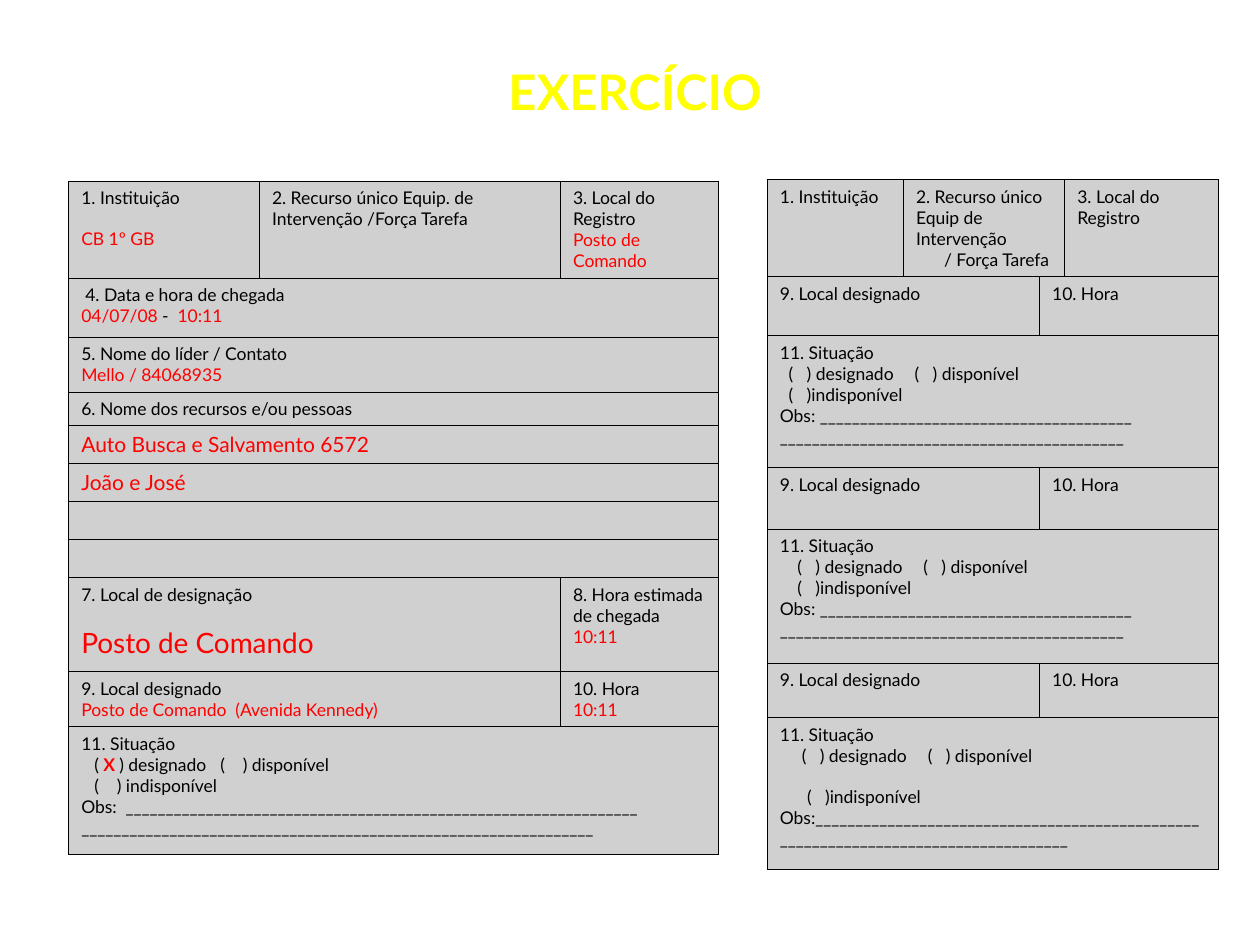
from dataclasses import dataclass

from lxml import etree
from pptx import Presentation
from pptx import util as u
from pptx.dml.color import RGBColor
from pptx.enum import text
from pptx.oxml.ns import qn

COLORS = {"title": "FFFF00", "label": "000000", "answer": "FF0000", "cell": "D0D0D0", "border": "000000"}


@dataclass
class Line:
    runs: list
    size: float = 10
    indent: float = 0
    gap: float = 0
    tab: float = 0


def label(wording, **layout):
    return Line([(wording, "label", False)], **layout)


def answer(wording, **layout):
    return Line([(wording, "answer", False)], **layout)


def situation(indent, tab, last_indent, last_gap, notes):
    options = [
        label("(   ) designado\t(   ) disponível", indent=indent, tab=tab),
        label("(   )indisponível", indent=last_indent, gap=last_gap),
    ]
    return [label("11. Situação"), *options, *[label(note) for note in notes]]


class FormSlide:
    font = "Lato"
    border_width = 0.75

    def __init__(self, presentation):
        self.slide = presentation.slides.add_slide(presentation.slide_layouts[5])

    def style_run(self, run, size, color, bold):
        run.font.name = self.font
        run.font.size = u.Pt(size)
        run.font.bold = bold
        run.font.color.rgb = RGBColor.from_string(COLORS[color])

    def title(self, wording, left, top, width, height):
        shape = self.slide.shapes.title
        shape.left, shape.top, shape.width, shape.height = map(u.Pt, (left, top, width, height))
        frame = shape.text_frame
        frame.text = wording
        frame.vertical_anchor = text.MSO_ANCHOR.MIDDLE
        paragraph = frame.paragraphs[0]
        paragraph.alignment = text.PP_ALIGN.CENTER
        self.style_run(paragraph.runs[0], 28, "title", True)

    def write_line(self, paragraph, line):
        properties = paragraph._p.get_or_add_pPr()
        properties.set("marL", str(u.Pt(line.indent)))
        properties.set("indent", "0")
        if line.gap:
            paragraph.space_before = u.Pt(line.gap)
        if line.tab:
            stops = etree.SubElement(properties, qn("a:tabLst"))
            etree.SubElement(stops, qn("a:tab"), pos=str(u.Pt(line.tab)), algn="l")
        for wording, color, bold in line.runs:
            run = paragraph.add_run()
            run.text = wording
            self.style_run(run, line.size, color, bold)

    def style_cell(self, cell):
        cell.fill.solid()
        cell.fill.fore_color.rgb = RGBColor.from_string(COLORS["cell"])
        properties = cell._tc.get_or_add_tcPr()
        for position, side in enumerate(("lnL", "lnR", "lnT", "lnB")):
            border = etree.Element(qn("a:" + side), w=str(u.Pt(self.border_width)))
            fill = etree.SubElement(border, qn("a:solidFill"))
            etree.SubElement(fill, qn("a:srgbClr"), val=COLORS["border"])
            properties.insert(position, border)
        cell.text_frame.paragraphs[0]._p.get_or_add_endParaRPr().set("sz", "1000")

    def table(self, left, top, widths, rows):
        heights = [height for height, cells in rows]
        bounds = map(u.Pt, (left, top, sum(widths), sum(heights)))
        table = self.slide.shapes.add_table(len(rows), len(widths), *bounds).table
        table.first_row = table.horz_banding = False
        for column, width in zip(table.columns, widths):
            column.width = u.Pt(width)
        for row, height in zip(table.rows, heights):
            row.height = u.Pt(height)
        for cell in table.iter_cells():
            self.style_cell(cell)
        for row_index, (height, cells) in enumerate(rows):
            column_index = 0
            for span, lines in cells:
                cell = table.cell(row_index, column_index)
                if span > 1:
                    cell.merge(table.cell(row_index, column_index + span - 1))
                frame = cell.text_frame
                for index, line in enumerate(lines):
                    paragraph = frame.add_paragraph() if index else frame.paragraphs[0]
                    self.write_line(paragraph, line)
                column_index += span


def resource_rows():
    marked = Line(
        [("( ", "label", False), ("X ", "answer", True), (") designado\t(    ) disponível", "label", False)],
        indent=7.4, tab=86.9,
    )
    arrival = Line([("04/07/08 ", "answer", False), ("-  ", "label", False), ("10:11", "answer", False)])
    rule = "_" * 64
    return [
        (55.4, [
            (1, [label("1. Instituição"), answer("CB 1º GB", gap=11)]),
            (1, [label("2. Recurso único Equip. de Intervenção /Força Tarefa")]),
            (1, [label("3. Local do Registro"), answer("Posto de Comando")]),
        ]),
        (33.7, [(3, [label("4. Data e hora de chegada", indent=2.3), arrival])]),
        (31.4, [(3, [label("5. Nome do líder / Contato"), answer("Mello / 84068935")])]),
        (19.2, [(3, [label("6. Nome dos recursos e/ou pessoas")])]),
        (21.7, [(3, [answer("Auto Busca e Salvamento 6572", size=12)])]),
        (21.7, [(3, [answer("João e José", size=12)])]),
        (21.7, [(3, [])]),
        (21.7, [(3, [])]),
        (53.8, [
            (2, [label("7. Local de designação"), answer("Posto de Comando", size=16, gap=12)]),
            (1, [label("8. Hora estimada de chegada"), answer("10:11")]),
        ]),
        (31.4, [
            (2, [label("9. Local designado"), answer("Posto de Comando  (Avenida Kennedy)")]),
            (1, [label("10. Hora"), answer("10:11")]),
        ]),
        (73.2, [(3, [
            label("11. Situação"), marked, label("(    ) indisponível", indent=7.4),
            label("Obs:  " + rule), label(rule),
        ])]),
    ]


def assignment_rows():
    notes = ["Obs: " + "_" * 39, "_" * 43]
    assignments = [
        (33.7, 75.4, situation(5, 80, 5, 0, notes)),
        (35.4, 76.6, situation(10, 85, 10, 0, notes)),
        (30.9, 86.9, situation(12.5, 87.5, 15.5, 12, ["Obs:" + "_" * 84])),
    ]
    rows = [(55.4, [
        (1, [label("1. Instituição")]),
        (2, [label("2. Recurso único"), label("Equip de Intervenção"), label("/ Força Tarefa", indent=16)]),
        (1, [label("3. Local do Registro")]),
    ])]
    for place_height, situation_height, lines in assignments:
        rows.append((place_height, [(2, [label("9. Local designado")]), (2, [label("10. Hora")])]))
        rows.append((situation_height, [(4, lines)]))
    return rows


def main():
    presentation = Presentation()
    presentation.slide_width, presentation.slide_height = u.Pt(720), u.Pt(540)
    form = FormSlide(presentation)
    form.title("EXERCÍCIO", 139, 31.7, 447.8, 41)
    form.table(39.3, 103.7, [109, 172, 90.3], resource_rows())
    form.table(438.5, 102.7, [77.8, 77.8, 14.4, 87.8], assignment_rows())
    presentation.save("out.pptx")


if __name__ == "__main__":
    main()
